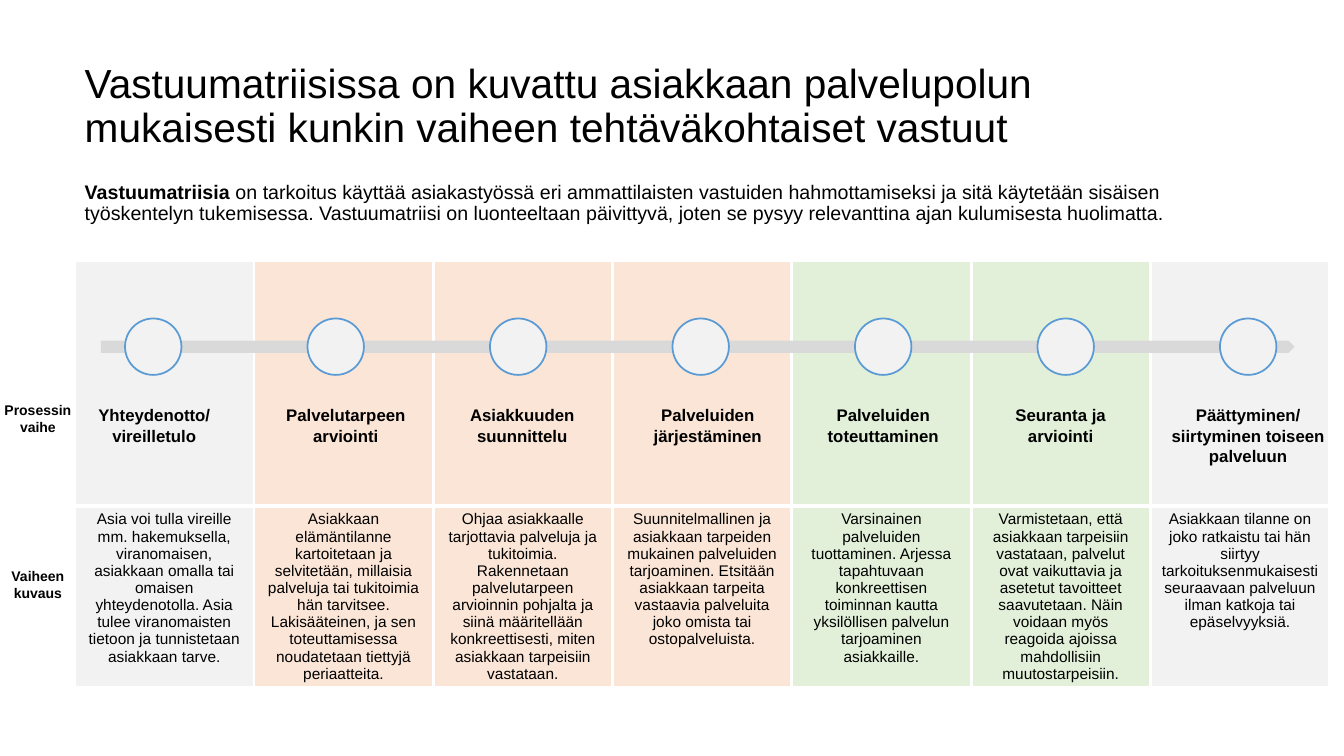
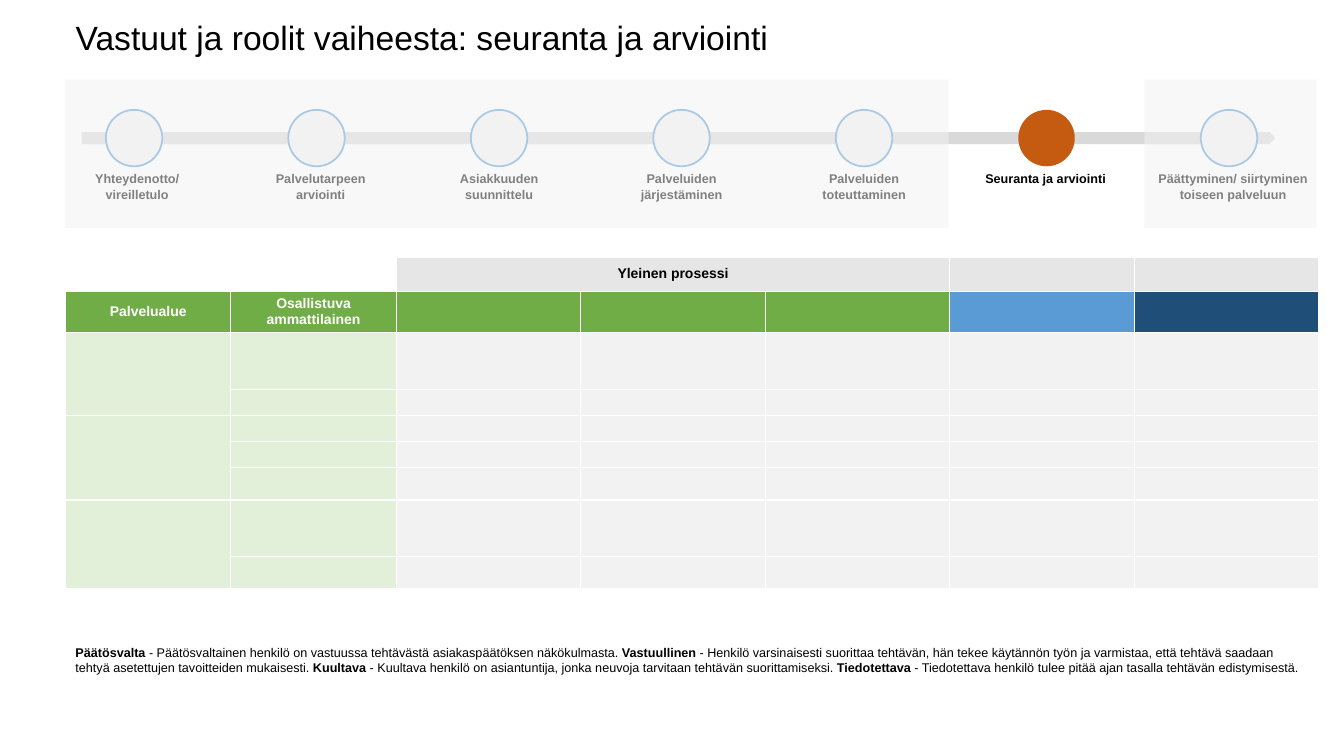
from dataclasses import dataclass

from lxml.etree import SubElement
from pptx import Presentation
from pptx.dml.color import RGBColor
from pptx.enum.shapes import MSO_SHAPE
from pptx.enum.text import MSO_ANCHOR, MSO_AUTO_SIZE, PP_ALIGN
from pptx.oxml import parse_xml
from pptx.oxml.ns import nsdecls, qn
from pptx.util import Inches, Pt


@dataclass(frozen=True)
class Theme:
    font: str = "Arial"
    black: str = "000000"
    white: str = "FFFFFF"
    pale: str = "F2F2F2"
    band: str = "E7E6E6"
    track: str = "D9D9D9"
    peach: str = "FBE5D6"
    mint: str = "E2F0D9"
    green: str = "70AD47"
    blue: str = "5B9BD5"
    navy: str = "1F4E79"
    active: str = "C55A11"
    title: int = 29
    phase_title: int = 24
    lead: int = 14
    stage: int = 12
    description: int = 11
    header: int = 10
    note: int = 9
    empty: int = 8


THEME = Theme()


def write(frame, text, size, bold=False, color=THEME.black, align=PP_ALIGN.LEFT,
          anchor=None, spacing=None, side=None):
    """Fill a text frame; parts between ** marks are bold, side is the left and right inset."""
    frame.word_wrap = True
    if anchor is not None:
        frame.vertical_anchor = anchor
    if side is not None:
        frame.margin_left = frame.margin_right = Inches(side)
    paragraph = frame.paragraphs[0]
    paragraph.alignment = align
    paragraph.space_before = Pt(0)
    if spacing:
        paragraph.line_spacing = spacing
    if not text:
        paragraph._p.get_or_add_endParaRPr().set("sz", str(size * 100))
    for index, part in enumerate(text.split("**")):
        if part:
            run = paragraph.add_run()
            run.text = part
            run.font.name = THEME.font
            run.font.size = Pt(size)
            run.font.bold = bold or index % 2 == 1
            run.font.color.rgb = RGBColor.from_string(color)


def style_cell(cell, fill, vertical, horizontal):
    """Fill a cell and give it white borders of the given widths in points."""
    if fill:
        cell.fill.solid()
        cell.fill.fore_color.rgb = RGBColor.from_string(fill)
    else:
        cell.fill.background()
    borders = {"lnL": vertical, "lnR": vertical, "lnT": horizontal, "lnB": horizontal}
    for index, (edge, width) in enumerate(borders.items()):
        cell._tc.get_or_add_tcPr().insert(index, parse_xml(
            f'<a:{edge} {nsdecls("a")} w="{Pt(width)}"><a:solidFill>'
            f'<a:srgbClr val="{THEME.white}"/></a:solidFill></a:{edge}>'))


deck = Presentation()
deck.slide_width, deck.slide_height = Inches(13.33), Inches(7.5)
overview = deck.slides.add_slide(deck.slide_layouts[1])
phase = deck.slides.add_slide(deck.slide_layouts[5])

# Titles and lead text
lead = overview.placeholders[1]
headings = [
    (overview.shapes.title, (0.74, 0.34, 11.42, 1.45), THEME.title, MSO_ANCHOR.MIDDLE,
     "Vastuumatriisissa on kuvattu asiakkaan palvelupolun mukaisesti kunkin vaiheen "
     "tehtäväkohtaiset vastuut"),
    (phase.shapes.title, (0.65, 0.05, 10.02, 0.68), THEME.phase_title, MSO_ANCHOR.MIDDLE,
     "Vastuut ja roolit vaiheesta: seuranta ja arviointi"),
    (lead, (0.74, 1.76, 11.85, 0.46), THEME.lead, MSO_ANCHOR.TOP,
     "**Vastuumatriisia** on tarkoitus käyttää asiakastyössä eri ammattilaisten vastuiden "
     "hahmottamiseksi ja sitä käytetään sisäisen työskentelyn tukemisessa. Vastuumatriisi on "
     "luonteeltaan päivittyvä, joten se pysyy relevanttina ajan kulumisesta huolimatta."),
]
for heading, box, size, anchor, text in headings:
    heading.left, heading.top, heading.width, heading.height = map(Inches, box)
    heading.text_frame.auto_size = MSO_AUTO_SIZE.NONE
    write(heading.text_frame, text, size, anchor=anchor, spacing=0.9)
lead_format = lead.text_frame.paragraphs[0]._p.get_or_add_pPr()
lead_format.set("marL", "0")
lead_format.set("indent", "0")
SubElement(lead_format, qn("a:buNone"))

# Stage descriptions
stages = [
    ("Yhteydenotto/ vireilletulo", THEME.pale,
     "Asia voi tulla vireille mm. hakemuksella, viranomaisen, asiakkaan omalla tai omaisen "
     "yhteydenotolla. Asia tulee viranomaisten tietoon ja tunnistetaan asiakkaan tarve."),
    ("Palvelutarpeen arviointi", THEME.peach,
     "Asiakkaan elämäntilanne kartoitetaan ja selvitetään, millaisia palveluja tai tukitoimia "
     "hän tarvitsee. Lakisääteinen, ja sen toteuttamisessa noudatetaan tiettyjä periaatteita."),
    ("Asiakkuuden suunnittelu", THEME.peach,
     "Ohjaa asiakkaalle tarjottavia palveluja ja tukitoimia. Rakennetaan palvelutarpeen "
     "arvioinnin pohjalta ja siinä määritellään konkreettisesti, miten asiakkaan tarpeisiin "
     "vastataan."),
    ("Palveluiden järjestäminen", THEME.peach,
     "Suunnitelmallinen ja asiakkaan tarpeiden mukainen palveluiden tarjoaminen. Etsitään "
     "asiakkaan tarpeita vastaavia palveluita joko omista tai ostopalveluista."),
    ("Palveluiden toteuttaminen", THEME.mint,
     "Varsinainen palveluiden tuottaminen. Arjessa tapahtuvaan konkreettisen toiminnan kautta "
     "yksilöllisen palvelun tarjoaminen asiakkaille."),
    ("Seuranta ja arviointi", THEME.mint,
     "Varmistetaan, että asiakkaan tarpeisiin vastataan, palvelut ovat vaikuttavia ja asetetut "
     "tavoitteet saavutetaan. Näin voidaan myös reagoida ajoissa mahdollisiin "
     "muutostarpeisiin."),
    ("Päättyminen/ siirtyminen toiseen palveluun", THEME.pale,
     "Asiakkaan tilanne on joko ratkaistu tai hän siirtyy tarkoituksenmukaisesti seuraavaan "
     "palveluun ilman katkoja tai epäselvyyksiä."),
]
descriptions = overview.shapes.add_table(
    2, len(stages), Inches(0.74), Inches(2.58), Inches(12.45), Inches(3.71)).table
descriptions.first_row = descriptions.horz_banding = False
descriptions.rows[0].height, descriptions.rows[1].height = Inches(2.44), Inches(1.27)
for column, (_, tint, description) in enumerate(stages):
    for row in range(2):
        style_cell(descriptions.cell(row, column), tint, vertical=2.25, horizontal=3)
    write(descriptions.cell(1, column).text_frame, description, THEME.description,
          align=PP_ALIGN.CENTER)
for top, text in [(3.92, "Prosessin vaihe"), (5.57, "Vaiheen kuvaus")]:
    row_label = overview.shapes.add_textbox(0, Inches(top), Inches(0.75), Inches(0.46))
    write(row_label.text_frame, text, THEME.header, bold=True, align=PP_ALIGN.CENTER,
          anchor=MSO_ANCHOR.MIDDLE, side=0)

# Responsibility matrix
widths = [1.64] * 2 + [1.83] * 5
heights = [0.34, 0.34, 0.56, 0.26, 0.26, 0.26, 0.32, 0.56, 0.32]
row_fills = [
    [None] * 2 + [THEME.band] * 5,
    [THEME.green] * 5 + [THEME.blue, THEME.navy],
] + [[THEME.mint] * 2 + [THEME.pale] * 5] * 7
captions = {(0, 2): "Yleinen prosessi", (1, 0): "Palvelualue",
            (1, 1): "Osallistuva ammattilainen"}
matrix = phase.shapes.add_table(
    len(heights), len(widths), Inches(0.65), Inches(2.55),
    Inches(sum(widths)), Inches(sum(heights))).table
matrix.first_row = matrix.horz_banding = False
for column, width in enumerate(widths):
    matrix.columns[column].width = Inches(width)
for row, height in enumerate(heights):
    matrix.rows[row].height = Inches(height)
    for column, fill in enumerate(row_fills[row]):
        cell = matrix.cell(row, column)
        style_cell(cell, fill, vertical=1, horizontal=1)
        cell.vertical_anchor = MSO_ANCHOR.MIDDLE
        caption = captions.get((row, column), "")
        write(cell.text_frame, caption, THEME.header if caption else THEME.empty, bold=True,
              color=THEME.white if row == 1 else THEME.black, align=PP_ALIGN.CENTER)
for first, last in [((0, 2), (0, 4)), ((2, 0), (3, 0)), ((4, 0), (6, 0)), ((7, 0), (8, 0))]:
    matrix.cell(*first).merge(matrix.cell(*last))

# Service path: slide, left, middle, label top, label size, active stage, label shifts
STEP, DOT, TRACK = 1.81, 0.56, 0.12
label_widths = [1.22] * 5 + [1.43, 1.9]
service_paths = [
    (overview, 1.0, 3.44, 3.97, THEME.stage, None, [0.01, 0.1, 0.04, 0.07, 0, -0.05, 0]),
    (phase, 0.81, 1.37, 1.65, THEME.note, 5, [0.03, 0.04, 0, 0, 0, -0.01, 0.04]),
]
for slide, left, middle, label_top, size, active, shifts in service_paths:
    track = slide.shapes.add_shape(
        MSO_SHAPE.RIGHT_ARROW, Inches(left), Inches(middle - TRACK / 2),
        Inches(11.84), Inches(TRACK))
    track.adjustments[0], track.adjustments[1] = 1, 0.5
    track.shadow.inherit = False
    track.fill.solid()
    track.fill.fore_color.rgb = RGBColor.from_string(THEME.track)
    track.line.fill.background()
    for index, (name, _, _) in enumerate(stages):
        center = left + 0.52 + index * STEP
        dot = slide.shapes.add_shape(
            MSO_SHAPE.OVAL, Inches(center - DOT / 2), Inches(middle - DOT / 2),
            Inches(DOT), Inches(DOT))
        dot.shadow.inherit = False
        dot.fill.solid()
        if index == active:
            dot.fill.fore_color.rgb = RGBColor.from_string(THEME.active)
            dot.line.fill.background()
        else:
            dot.fill.fore_color.rgb = RGBColor.from_string(THEME.pale)
            dot.line.color.rgb = RGBColor.from_string(THEME.blue)
            dot.line.width = Pt(1.25)
        width = label_widths[index]
        label = slide.shapes.add_textbox(
            Inches(center + shifts[index] - width / 2), Inches(label_top),
            Inches(width), Inches(0.46))
        write(label.text_frame, name, size, bold=True, align=PP_ALIGN.CENTER, side=0)

# Veils over the inactive stages
for left, width in [(0.65, 8.76), (11.35, 1.71)]:
    veil = phase.shapes.add_shape(
        MSO_SHAPE.RECTANGLE, Inches(left), Inches(0.79), Inches(width), Inches(1.47))
    veil.shadow.inherit = False
    veil.fill.solid()
    veil.fill.fore_color.rgb = RGBColor.from_string(THEME.pale)
    veil.line.fill.background()
    tint = veil._element.spPr.find(qn("a:solidFill")).find(qn("a:srgbClr"))
    SubElement(tint, qn("a:alpha")).set("val", "53000")

role_key = phase.shapes.add_textbox(Inches(0.65), Inches(6.28), Inches(12.41), Inches(0.53))
write(role_key.text_frame,
      "**Päätösvalta** - Päätösvaltainen henkilö on vastuussa tehtävästä asiakaspäätöksen "
      "näkökulmasta. **Vastuullinen** - Henkilö varsinaisesti suorittaa tehtävän, hän tekee "
      "käytännön työn ja varmistaa, että tehtävä saadaan tehtyä asetettujen tavoitteiden "
      "mukaisesti. **Kuultava** - Kuultava henkilö on asiantuntija, jonka neuvoja tarvitaan "
      "tehtävän suorittamiseksi. **Tiedotettava** - Tiedotettava henkilö tulee pitää ajan "
      "tasalla tehtävän edistymisestä.",
      THEME.note, anchor=MSO_ANCHOR.MIDDLE)

deck.save("out.pptx")
